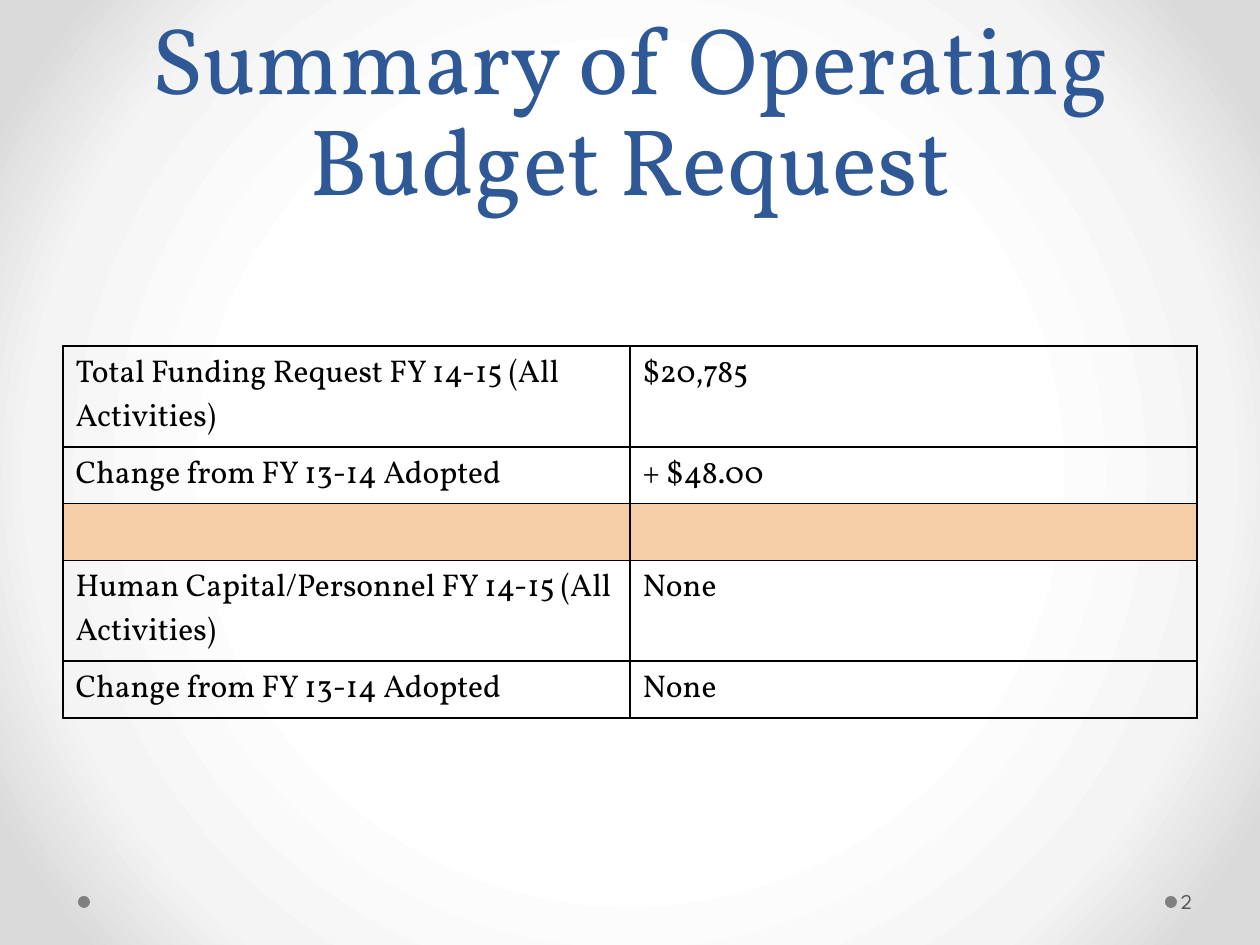
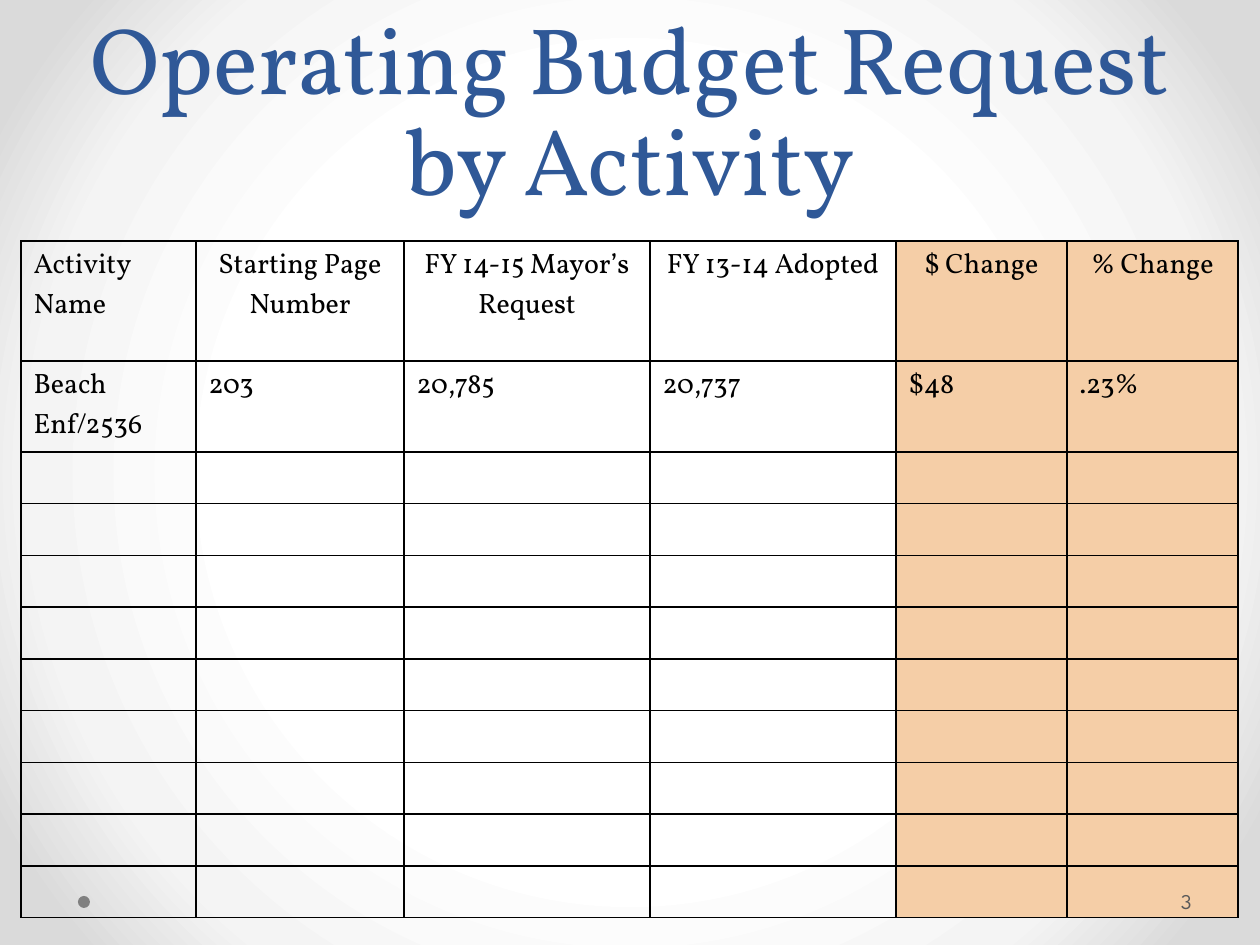
from dataclasses import dataclass

from lxml.etree import SubElement
from pptx import Presentation
from pptx.dml.color import RGBColor
from pptx.enum.shapes import MSO_SHAPE as Shape
from pptx.enum.text import MSO_ANCHOR as Anchor, MSO_AUTO_SIZE as AutoSize, PP_ALIGN as Align
from pptx.oxml import parse_xml
from pptx.oxml.ns import nsdecls, qn
from pptx.util import Emu, Pt

EMU_PER_PX = 914400 / 126


@dataclass(frozen=True)
class Theme:
    heading_font: str = "Vollkorn"
    number_font: str = "League Spartan"
    title_color: str = "2F5897"
    ink: str = "000000"
    highlight: str = "F5CEA7"
    dot: str = "808080"
    number_color: str = "595959"
    backdrop: tuple = ((50, "FFFFFF"), (76, "F4F4F4"), (92, "DADADA"))
    title_size: int = 54
    title_leading: int = 58
    summary_size: int = 18
    activity_size: int = 16
    number_size: int = 12
    border: int = 1


@dataclass(frozen=True)
class Box:
    left: int
    top: int
    width: int
    height: int

    def emu(self):
        return [px(n) for n in (self.left, self.top, self.width, self.height)]


THEME = Theme()
PAGE = Box(0, 0, 1260, 945)
TITLE = Box(63, 0, 1134, 221)
FOOTER = Box(78, 876, 1176, 50)
SUMMARY = Box(63, 346, 1134, 371)
ACTIVITIES = Box(21, 241, 1217, 677)

SUMMARY_ROWS = [
    ("Total Funding Request FY 14-15 (All Activities)", "$20,785"),
    ("Change from FY 13-14 Adopted", "+ $48.00"),
    ("", ""),
    ("Human Capital/Personnel FY 14-15 (All Activities)", "None"),
    ("Change from FY 13-14 Adopted", "None"),
]
ACTIVITY_HEADER = ("Activity Name", "Starting Page Number", "FY 14-15 Mayor’s Request",
                   "FY 13-14 Adopted", "$ Change", "% Change")
BEACH_ROW = ("Beach Enf/2536", "203", "20,785", "20,737", "$48", ".23%")
SPARE_ROWS = 9


def px(n):
    return Emu(round(n * EMU_PER_PX))


def write(frame, text, *, size, color=THEME.ink, font=THEME.heading_font,
          align=Align.LEFT, leading=None):
    paragraph = frame.paragraphs[0]
    paragraph.alignment = align
    if leading:
        paragraph.line_spacing = Pt(leading)
    run = paragraph.add_run()
    run.text = text
    run.font.name = font
    run.font.size = Pt(size)
    run.font.color.rgb = RGBColor.from_string(color)


def paint_backdrop(master):
    master.background.fill.solid()
    properties = master.element.find(".//" + qn("p:bgPr"))
    stops = "".join(
        f'<a:gs pos="{percent * 1000}"><a:srgbClr val="{color}"/></a:gs>'
        for percent, color in THEME.backdrop)
    gradient = parse_xml(
        f'<a:gradFill {nsdecls("a")} rotWithShape="1"><a:gsLst>{stops}</a:gsLst>'
        '<a:path path="circle"><a:fillToRect l="50000" t="50000" r="50000" b="50000"/>'
        '</a:path></a:gradFill>')
    properties.replace(properties.find(qn("a:solidFill")), gradient)


def place_title(slide, box, text):
    title = slide.shapes.title
    title.left, title.top, title.width, title.height = box.emu()
    frame = title.text_frame
    frame.auto_size = AutoSize.NONE
    frame.vertical_anchor = Anchor.BOTTOM
    write(frame, text, size=THEME.title_size, color=THEME.title_color,
          align=Align.CENTER, leading=THEME.title_leading)


def place_dots(slide, box):
    for offset in (1087, 0):
        spot = Box(box.left + offset, box.top + 20, 12, 12)
        dot = slide.shapes.add_shape(Shape.OVAL, *spot.emu())
        dot.shadow.inherit = False
        dot.fill.solid()
        dot.fill.fore_color.rgb = RGBColor.from_string(THEME.dot)
        dot.line.fill.background()


def place_number(slide, box, number):
    width = 77
    area = Box(box.left + box.width - width, box.top, width, box.height)
    frame = slide.shapes.add_textbox(*area.emu()).text_frame
    frame.word_wrap = True
    frame.vertical_anchor = Anchor.MIDDLE
    frame.margin_left = px(4)
    frame.margin_top = frame.margin_right = frame.margin_bottom = px(6)
    write(frame, str(number), size=THEME.number_size, color=THEME.number_color,
          font=THEME.number_font)


def outline(cell):
    properties = cell._tc.get_or_add_tcPr()
    for side in ("lnL", "lnR", "lnT", "lnB"):
        edge = SubElement(properties, qn(f"a:{side}"), w=str(Pt(THEME.border)))
        SubElement(SubElement(edge, qn("a:solidFill")), qn("a:srgbClr"), val=THEME.ink)


def place_table(slide, box, rows, widths, heights, *, size, is_highlighted, is_centered):
    table = slide.shapes.add_table(len(rows), len(widths), *box.emu()).table
    table.first_row = table.horz_banding = False
    for column, width in zip(table.columns, widths):
        column.width = px(width)
    for row, height in zip(table.rows, heights):
        row.height = px(height)
    for r, values in enumerate(rows):
        for c, value in enumerate(values):
            cell = table.cell(r, c)
            outline(cell)
            if is_highlighted(r, c):
                cell.fill.solid()
                cell.fill.fore_color.rgb = RGBColor.from_string(THEME.highlight)
            else:
                cell.fill.background()
            if value:
                write(cell.text_frame, value, size=size,
                      align=Align.CENTER if is_centered(r, c) else Align.LEFT)


def place_summary(slide, box):
    place_table(slide, box, SUMMARY_ROWS, [box.width / 2] * 2, [101, 56, 57, 100, 57],
                size=THEME.summary_size,
                is_highlighted=lambda r, c: r == 2,
                is_centered=lambda r, c: False)


def place_activities(slide, box):
    header_height, beach_height = 120, 91
    spare_height = (box.height - header_height - beach_height) / SPARE_ROWS
    rows = [ACTIVITY_HEADER, BEACH_ROW] + [("",) * len(ACTIVITY_HEADER)] * SPARE_ROWS
    place_table(slide, box, rows, [175, 208, 246, 246, 171, 171],
                [header_height, beach_height] + [spare_height] * SPARE_ROWS,
                size=THEME.activity_size,
                is_highlighted=lambda r, c: c >= 4,
                is_centered=lambda r, c: r == 0 and c > 0)


def add_budget_slide(deck, number, title, place_body, body_box):
    slide = deck.slides.add_slide(deck.slide_layouts.get_by_name("Title Only"))
    place_dots(slide, FOOTER)
    place_title(slide, TITLE, title)
    place_body(slide, body_box)
    place_number(slide, FOOTER, number)


def main():
    deck = Presentation()
    deck.slide_width, deck.slide_height = px(PAGE.width), px(PAGE.height)
    paint_backdrop(deck.slide_master)
    add_budget_slide(deck, 2, "Summary of Operating Budget Request", place_summary, SUMMARY)
    add_budget_slide(deck, 3, "Operating Budget Request by Activity",
                     place_activities, ACTIVITIES)
    deck.save("out.pptx")


if __name__ == "__main__":
    main()
